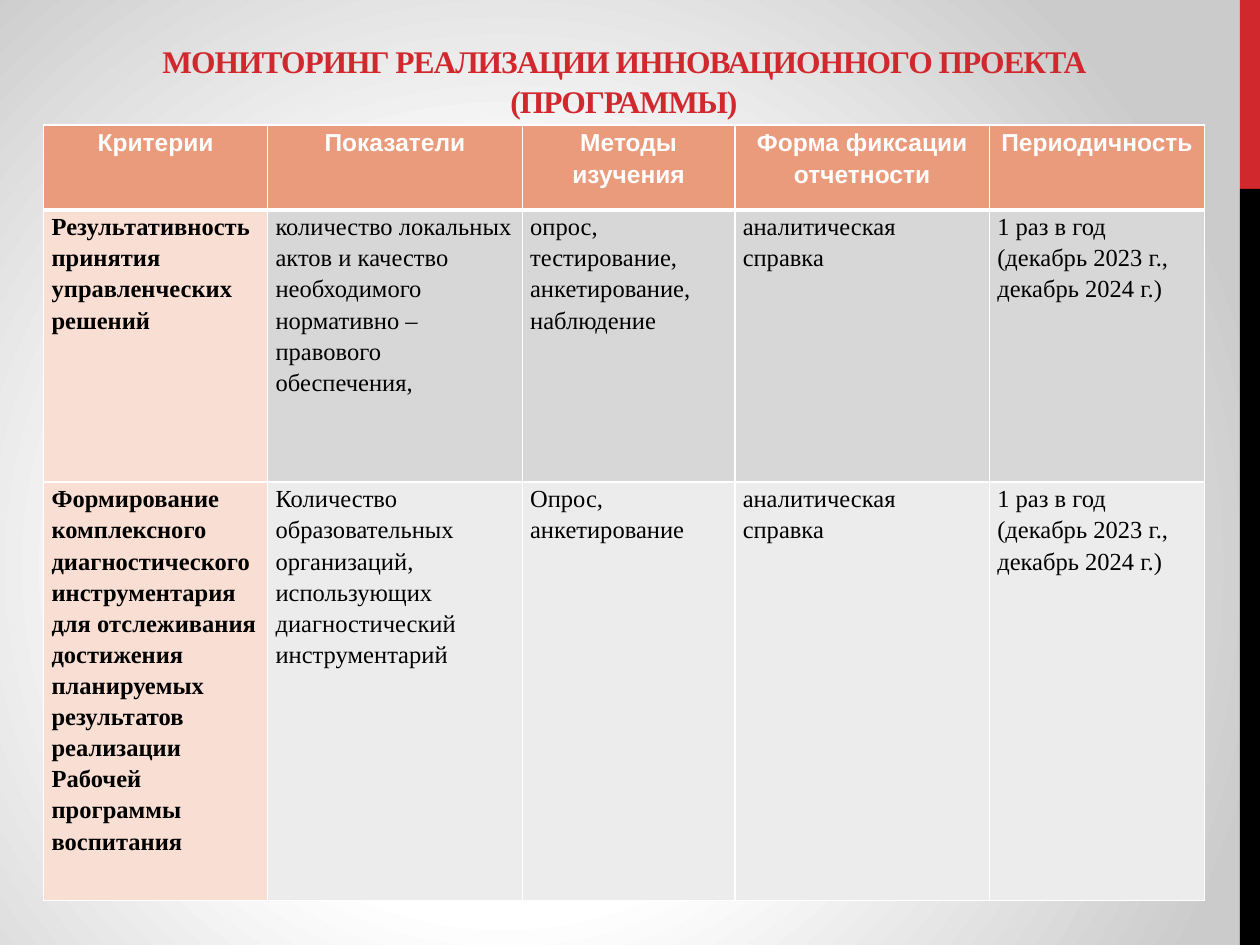
from dataclasses import dataclass

from lxml import etree
from pptx import Presentation
from pptx.dml.color import RGBColor
from pptx.enum.shapes import MSO_SHAPE
from pptx.enum.text import MSO_ANCHOR, PP_ALIGN
from pptx.oxml import parse_xml
from pptx.oxml.ns import nsdecls, qn
from pptx.util import Pt

RECTANGLE = MSO_SHAPE.RECTANGLE
BOTTOM, TOP = MSO_ANCHOR.BOTTOM, MSO_ANCHOR.TOP
CENTER, LEFT = PP_ALIGN.CENTER, PP_ALIGN.LEFT


@dataclass(frozen=True)
class Theme:
    """Colours, fonts and type sizes of the slide."""
    red: str = "D1282E"
    black: str = "000000"
    white: str = "FFFFFF"
    edge_grey: str = "CBCBCB"
    header: str = "EA9B7C"
    criterion: str = "F8DED3"
    bands: tuple = ("D7D7D7", "ECECEC")
    serif: str = "Times New Roman"
    sans: str = "Arial"
    title_size: int = 18
    table_size: int = 14


THEME = Theme()
TITLE = "МОНИТОРИНГ РЕАЛИЗАЦИИ ИННОВАЦИОННОГО ПРОЕКТА (ПРОГРАММЫ)"
COLUMN_WIDTHS = (128, 145.5, 121.5, 145.5, 123)
ROW_HEIGHTS = (48.5, 155.5, 239)
REPORT = "аналитическая справка"
PERIOD = "1 раз в год (декабрь 2023 г., декабрь 2024 г.)"
ROWS = (
    ("Критерии", "Показатели", "Методы изучения", "Форма фиксации отчетности",
     "Периодичность"),
    ("Результативность принятия управленческих решений",
     "количество локальных актов и качество необходимого нормативно – правового обеспечения,",
     "опрос, тестирование, анкетирование, наблюдение", REPORT, PERIOD),
    ("Формирование комплексного диагностического инструментария для отслеживания "
     "достижения планируемых результатов реализации Рабочей программы воспитания",
     "Количество образовательных организаций, использующих диагностический инструментарий",
     "Опрос, анкетирование", REPORT, PERIOD),
)


def set_values(target, values):
    """Set each attribute of the target from a dict."""
    for name, value in values.items():
        setattr(target, name, value)


def paint_background(page):
    """Fill the page with a circular gradient from white to grey."""
    page.background.fill.solid()
    holder = page.element.find(".//" + qn("p:bgPr"))
    stops = ((0, THEME.white), (44, THEME.white), (100, THEME.edge_grey))
    stop_xml = "".join(
        f'<a:gs pos="{place * 1000}"><a:srgbClr val="{color}"/></a:gs>'
        for place, color in stops)
    gradient = parse_xml(
        f'<a:gradFill {nsdecls("a")} rotWithShape="1"><a:gsLst>{stop_xml}</a:gsLst>'
        '<a:path path="circle"><a:fillToRect l="40000" t="60000" r="60000" b="40000"/>'
        '</a:path></a:gradFill>')
    holder.replace(holder.find(qn("a:solidFill")), gradient)


def add_bar(page, top, height, color):
    """Add one coloured bar at the right edge."""
    bar = page.shapes.add_shape(RECTANGLE, Pt(708.5), Pt(top), Pt(11.5), Pt(height))
    bar.shadow.inherit = False
    bar.fill.solid()
    bar.fill.fore_color.rgb = RGBColor.from_string(color)
    bar.line.fill.background()


def write_text(frame, text, color, font_values, para_values):
    """Write one formatted paragraph and return its span."""
    para = frame.paragraphs[0]
    set_values(para, para_values)
    span = para.add_run()
    span.text = text
    set_values(span.font, font_values)
    span.font.color.rgb = RGBColor.from_string(color)
    return span


def add_title(page):
    """Add the centred heading above the table."""
    box = page.shapes.add_textbox(Pt(25), Pt(21), Pt(663), Pt(51))
    set_values(box.text_frame, {"word_wrap": True, "vertical_anchor": BOTTOM})
    span = write_text(
        box.text_frame, TITLE, THEME.red,
        {"name": THEME.serif, "size": Pt(THEME.title_size), "bold": True},
        {"alignment": CENTER, "line_spacing": 1.05})
    span.font._element.set("spc", "-60")


def set_borders(cell, widths):
    """Draw white cell borders with the given width for each side."""
    properties = cell._tc.get_or_add_tcPr()
    for index, (side, width) in enumerate(widths.items()):
        line = etree.Element(qn(f"a:ln{side}"), w=str(Pt(width)))
        fill = etree.SubElement(line, qn("a:solidFill"))
        etree.SubElement(fill, qn("a:srgbClr"), val=THEME.white)
        properties.insert(index, line)


def format_cell(cell, text, row, column):
    """Fill and write one cell according to its row and column."""
    is_header = row == 0
    is_criterion = column == 0
    if is_header:
        fill = THEME.header
    else:
        fill = THEME.criterion if is_criterion else THEME.bands[row - 1]
    cell.fill.solid()
    cell.fill.fore_color.rgb = RGBColor.from_string(fill)
    set_values(cell, {"margin_left": Pt(4.5), "margin_right": Pt(4.5),
                      "margin_top": 0, "margin_bottom": 0, "vertical_anchor": TOP})
    write_text(
        cell.text_frame, text, THEME.white if is_header else THEME.black,
        {"name": THEME.sans if is_header else THEME.serif,
         "size": Pt(THEME.table_size), "bold": is_header or is_criterion},
        {"alignment": CENTER if is_header else LEFT,
         "line_spacing": 1.15, "space_after": Pt(6)})
    set_borders(cell, {"L": 1, "R": 1, "T": 3 if row == 1 else 1,
                       "B": 3 if is_header else 1})


def add_monitoring_table(page):
    """Add the table of criteria, indicators and methods."""
    table = page.shapes.add_table(
        len(ROWS), len(COLUMN_WIDTHS), Pt(25), Pt(71.5),
        Pt(sum(COLUMN_WIDTHS)), Pt(sum(ROW_HEIGHTS))).table
    table.horz_banding = False
    for column, width in zip(table.columns, COLUMN_WIDTHS):
        column.width = Pt(width)
    for row, height in zip(table.rows, ROW_HEIGHTS):
        row.height = Pt(height)
    for row, texts in enumerate(ROWS):
        for column, text in enumerate(texts):
            format_cell(table.cell(row, column), text, row, column)


def main():
    """Build the slide and save the deck."""
    deck = Presentation()
    set_values(deck, {"slide_width": Pt(720), "slide_height": Pt(540)})
    page = deck.slides.add_slide(deck.slide_layouts[6])
    paint_background(page)
    add_bar(page, 0, 108, THEME.red)
    add_bar(page, 108, 432, THEME.black)
    add_title(page)
    add_monitoring_table(page)
    deck.save("out.pptx")


if __name__ == "__main__":
    main()
